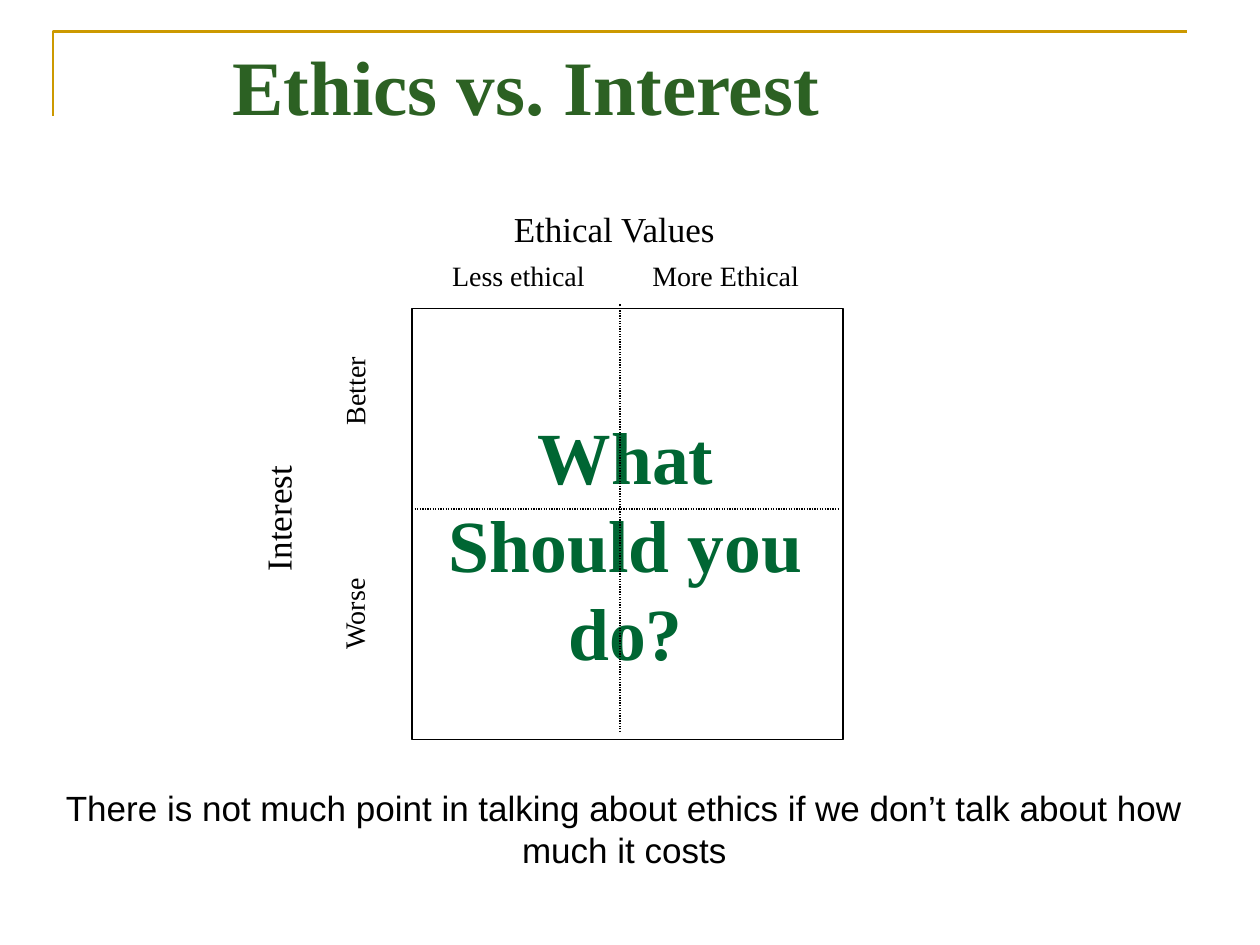
"""Build the ethics versus interest quadrant slide."""
from lxml import etree
from pptx import Presentation
from pptx.dml.color import RGBColor
from pptx.enum import dml, shapes, text
from pptx.oxml.ns import qn
from pptx.util import Pt

THEME = {
    "serif": "Times New Roman", "sans": "Arial",
    "ink": RGBColor.from_string("000000"), "paper": RGBColor.from_string("FFFFFF"),
    "gold": RGBColor.from_string("CC9900"), "heading": RGBColor.from_string("2C6123"),
    "question": RGBColor.from_string("006633"),
    "heading_size": Pt(44), "question_size": Pt(42),
    "axis_size": Pt(20), "label_size": Pt(16), "caption_size": Pt(20),
    "rule": Pt(1.5), "hairline": Pt(0.75),
}
CENTER = text.PP_ALIGN.CENTER


def write(box, words, font, frame=None, para=None):
    """Fill a box with one paragraph and apply its format values."""
    body = box.text_frame
    body.text = words
    paragraph = body.paragraphs[0]
    span = paragraph.runs[0]
    colour = font.pop("colour")
    frame_values = {"word_wrap": True, "auto_size": text.MSO_AUTO_SIZE.NONE,
                    "vertical_anchor": text.MSO_ANCHOR.MIDDLE, **(frame or {})}
    for target, values in ((body, frame_values), (paragraph, para or {}), (span.font, font)):
        for name, value in values.items():
            setattr(target, name, value)
    span.font.color.rgb = colour


def add_block(page, kind, left, top, width, height):
    """Add a preset shape without shadow, fill or line."""
    block = page.shapes.add_shape(kind, Pt(left), Pt(top), Pt(width), Pt(height))
    block.shadow.inherit = False
    block.fill.background()
    block.line.fill.background()
    return block


deck = Presentation()
deck.slide_width, deck.slide_height = Pt(720), Pt(540)
page = deck.slides.add_slide(deck.slide_layouts[5])

outline = page.shapes.build_freeform(Pt(30.24), Pt(66.24))
outline.add_line_segments([(Pt(30.24), Pt(18)), (Pt(678.24), Pt(18))], close=False)
corner = outline.convert_to_shape()
corner.shadow.inherit = False
corner.fill.background()
corner.line.color.rgb = THEME["gold"]
corner.line.width = THEME["rule"]

question = page.shapes.title
for name, value in {"left": 241.2, "top": 230.4, "width": 232.56, "height": 90}.items():
    setattr(question, name, Pt(value))
write(question, "What Should you do?",
      {"name": THEME["serif"], "size": THEME["question_size"], "bold": True,
       "colour": THEME["question"]},
      {"vertical_anchor": text.MSO_ANCHOR.TOP, "margin_top": Pt(4.5)},
      {"alignment": CENTER, "line_spacing": Pt(50.3)})

matrix = add_block(page, shapes.MSO_SHAPE.ROUNDED_RECTANGLE, 235.44, 176.4, 246.24, 246.24)
matrix.adjustments[0] = 0
matrix.line.color.rgb = THEME["ink"]
matrix.line.width = THEME["hairline"]

labels = [
    ("Less ethical", 251.28, 145.44, 90.72, 25.92, 0, "label_size"),
    ("More Ethical", 365.76, 145.44, 98.64, 25.92, 0, "label_size"),
    ("Better", 176.4, 210.24, 54, 25.92, 270, "label_size"),
    ("Worse", 174.96, 336.96, 56.16, 25.92, 270, "label_size"),
    ("Ethical Values", 286.56, 116.64, 131.76, 30.24, 0, "axis_size"),
    ("Interest", 122.4, 280.8, 74.88, 30.24, 270, "axis_size"),
]
for words, left, top, width, height, turn, size in labels:
    label = add_block(page, shapes.MSO_SHAPE.ROUNDED_RECTANGLE, left, top, width, height)
    label.adjustments[0] = 0
    label.rotation = turn
    write(label, words,
          {"name": THEME["serif"], "size": THEME[size], "colour": THEME["ink"]},
          {"word_wrap": False},
          {"alignment": text.PP_ALIGN.LEFT, "line_spacing": 0.95})

for ends in ((354.24, 418.32, 354.24, 173.52), (235.44, 290.88, 478.8, 290.88)):
    divider = page.shapes.add_connector(shapes.MSO_CONNECTOR.STRAIGHT, *map(Pt, ends))
    divider.line.color.rgb = THEME["ink"]
    divider.line.width = THEME["hairline"]
    divider.line.dash_style = dml.MSO_LINE.ROUND_DOT
    etree.SubElement(divider._element.spPr, qn("a:effectLst"))

caption = add_block(page, shapes.MSO_SHAPE.RECTANGLE, 25.2, 445.68, 663.12, 55.44)
caption.fill.solid()
caption.fill.fore_color.rgb = THEME["paper"]
write(caption,
      "There is not much point in talking about ethics if we don’t talk about how much it costs",
      {"name": THEME["sans"], "size": THEME["caption_size"], "colour": THEME["ink"]},
      para={"alignment": CENTER})

heading = page.shapes.add_textbox(Pt(-30.96), Pt(3.6), Pt(663.12), Pt(90))
write(heading, "Ethics vs. Interest",
      {"name": THEME["serif"], "size": THEME["heading_size"], "bold": True,
       "colour": THEME["heading"]},
      para={"alignment": CENTER})

deck.save("out.pptx")
